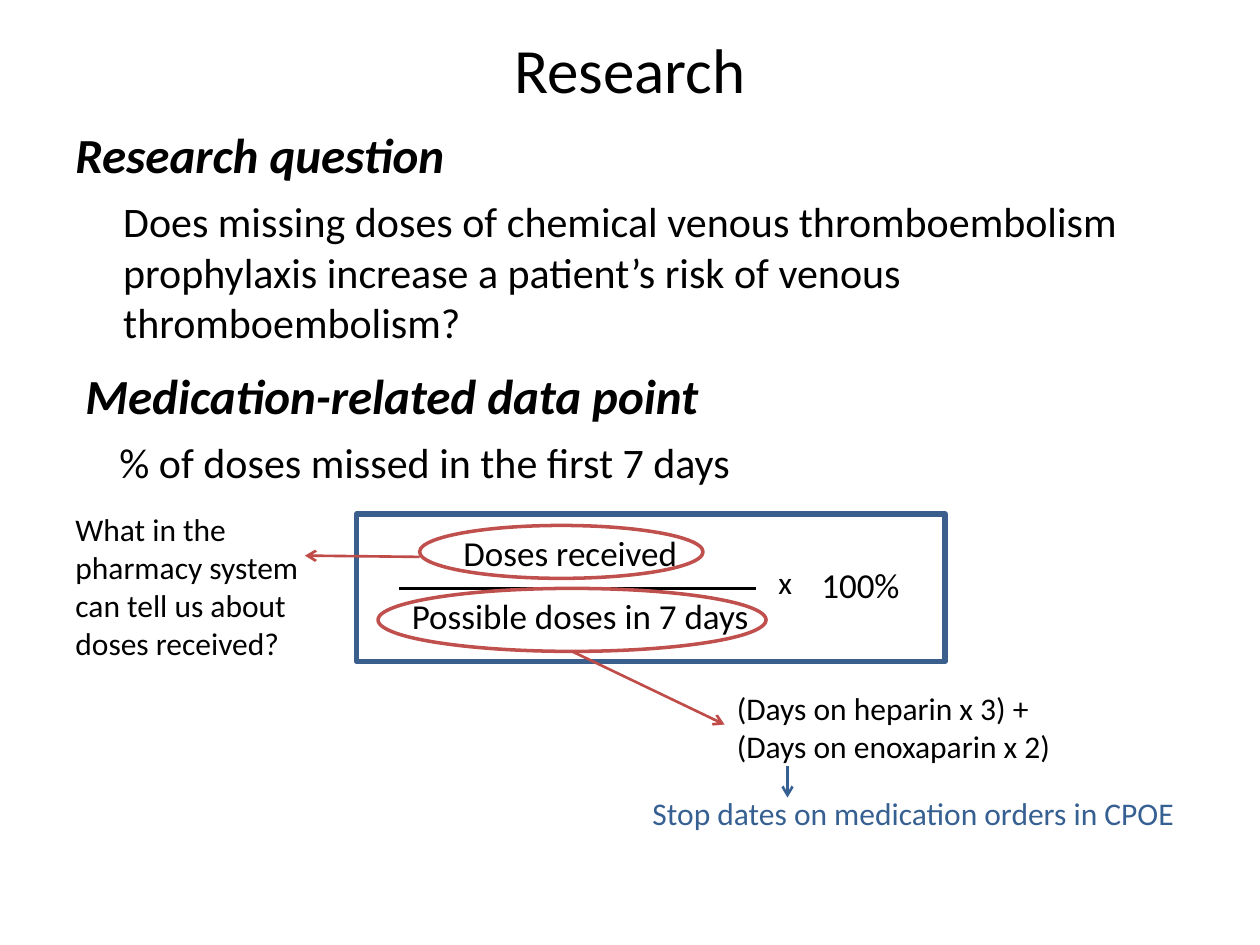
from dataclasses import dataclass

from lxml import etree
from pptx import Presentation
from pptx import util as u
from pptx.dml.color import RGBColor
from pptx.enum import shapes, text
from pptx.oxml import ns


@dataclass
class Theme:
    font: str = "Calibri"
    black: str = "000000"
    red: str = "C0504D"
    arrow_red: str = "BF4C48"
    frame_blue: str = "3A5F8C"
    blue: str = "376092"
    title: int = 36
    heading: int = 28
    body: int = 24
    formula: int = 20
    note: int = 18


theme = Theme()
prs = Presentation()
prs.slide_width, prs.slide_height = u.Inches(10), u.Inches(7.5)
slide = prs.slides.add_slide(prs.slide_layouts[6])


def add_text(box, paragraphs, anchor=text.MSO_ANCHOR.TOP):
    """Each paragraph is its wording, size and optional format values."""
    frame = slide.shapes.add_textbox(*map(u.Inches, box)).text_frame
    frame.word_wrap = True
    frame.vertical_anchor = anchor
    for i, (wording, size, style) in enumerate(paragraphs):
        line = frame.paragraphs[0] if i == 0 else frame.add_paragraph()
        line.text = wording
        line.alignment = style.get("align", text.PP_ALIGN.LEFT)
        if "before" in style:
            line.space_before = u.Pt(style["before"])
        if "indent" in style:
            properties = line._p.get_or_add_pPr()
            properties.set("marL", str(u.Inches(style["indent"])))
            properties.set("indent", "0")
        emphasis = style.get("emphasis", False)
        font_values = {"name": theme.font, "size": u.Pt(size),
                       "bold": emphasis, "italic": emphasis}
        for name, value in font_values.items():
            setattr(line.runs[0].font, name, value)
        color = style.get("color", theme.black)
        line.runs[0].font.color.rgb = RGBColor.from_string(color)


def add_line(start, end, color, arrow=True):
    connector = slide.shapes.add_connector(
        shapes.MSO_CONNECTOR.STRAIGHT, *map(u.Inches, (*start, *end)))
    connector.line.color.rgb = RGBColor.from_string(color)
    connector.line.width = u.Pt(1.5)
    if arrow:
        etree.SubElement(connector.line._get_or_add_ln(),
                         ns.qn("a:tailEnd"), type="arrow")
    etree.SubElement(connector._element.spPr, ns.qn("a:effectLst"))


# Title
add_text((0.5, -0.08, 9, 1.25),
         [("Research", theme.title, {"align": text.PP_ALIGN.CENTER})],
         text.MSO_ANCHOR.MIDDLE)

# Question and data point, each a heading with an indented statement
sections = [
    ((0.5, 0.94, 9, 1.9), 0.38, "Research question",
     "Does missing doses of chemical venous thromboembolism prophylaxis "
     "increase a patient’s risk of venous thromboembolism?"),
    ((0.58, 2.85, 8.17, 1.1), 0.27, "Medication-related data point",
     "% of doses missed in the first 7 days"),
]
for box, indent, heading, statement in sections:
    add_text(box, [
        (heading, theme.heading, {"emphasis": True}),
        (statement, theme.body, {"indent": indent, "before": 7}),
    ])

# Formula
formula_parts = [
    ((3.58, 4.17, 2, 0.44), "Doses received", theme.formula),
    ((3.17, 4.67, 3, 0.44), "Possible doses in 7 days", theme.formula),
    ((6.08, 4.42, 0.25, 0.4), "x", theme.note),
    ((6.42, 4.42, 0.92, 0.44), "100%", theme.formula),
]
for box, wording, size in formula_parts:
    add_text(box, [(wording, size, {})])
add_line((3.17, 4.67), (6, 4.67), theme.black, arrow=False)

# Formula frame and the rings around numerator and denominator
outlines = [
    (shapes.MSO_SHAPE.RECTANGLE, (2.83, 4.08, 4.67, 1.17), theme.frame_blue, 3),
    (shapes.MSO_SHAPE.OVAL, (3.33, 4.17, 2.25, 0.42), theme.red, 2),
    (shapes.MSO_SHAPE.OVAL, (3, 4.67, 3.08, 0.5), theme.red, 2),
]
for kind, box, color, width in outlines:
    outline = slide.shapes.add_shape(kind, *map(u.Inches, box))
    outline.shadow.inherit = False
    outline.fill.background()
    outline.line.color.rgb = RGBColor.from_string(color)
    outline.line.width = u.Pt(width)

# Notes on the formula
notes = [
    ((0.5, 4, 2.08, 1.31), theme.black,
     ["What in the pharmacy system can tell us about doses received?"]),
    ((5.75, 5.42, 3.5, 0.71), theme.black,
     ["(Days on heparin x 3) +", "(Days on enoxaparin x 2)"]),
    ((5.08, 6.25, 4.42, 0.4), theme.blue,
     ["Stop dates on medication orders in CPOE"]),
]
for box, color, lines in notes:
    add_text(box, [(line, theme.note, {"color": color}) for line in lines])

# Arrows to the notes
add_line((3.33, 4.42), (2.42, 4.41), theme.arrow_red)
add_line((4.54, 5.17), (5.75, 5.75), theme.arrow_red)
add_line((6.25, 6.08), (6.25, 6.33), theme.blue)

prs.save("out.pptx")
